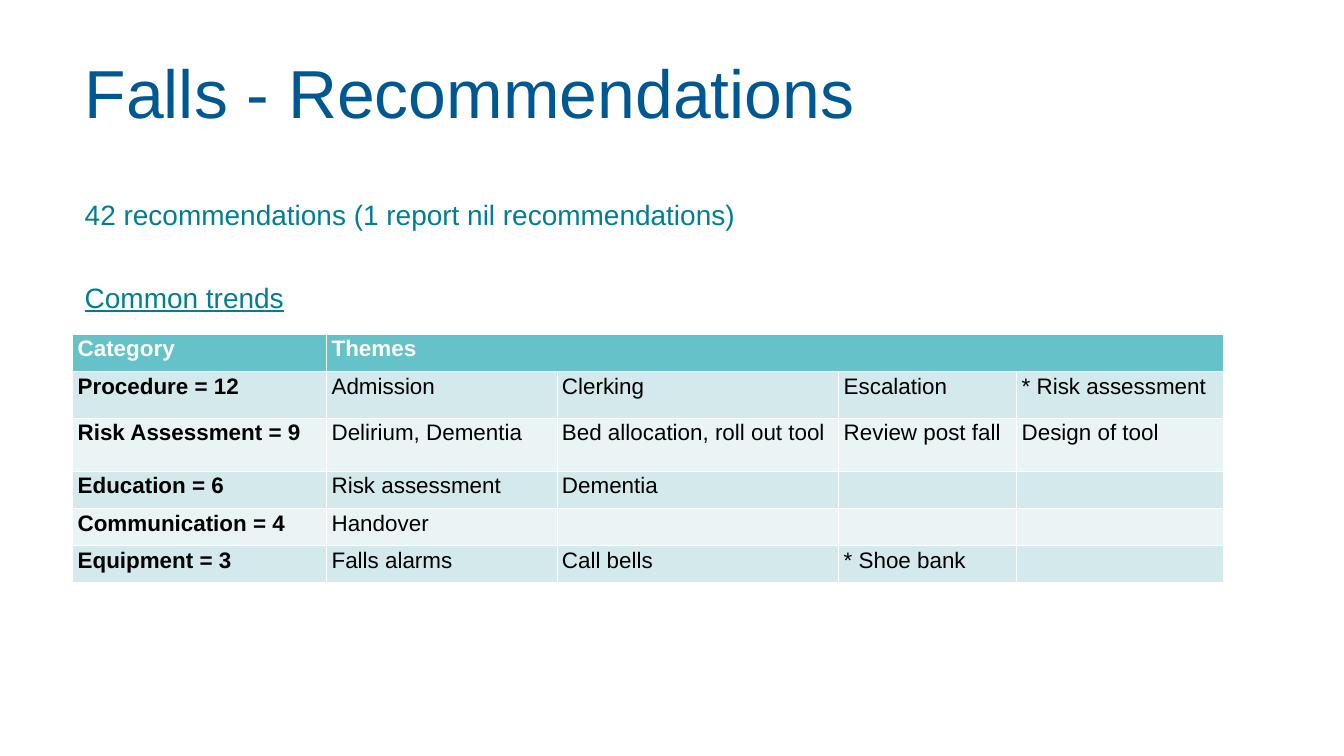
from lxml.etree import SubElement
from pptx import Presentation
from pptx.dml.color import RGBColor
from pptx.enum.text import MSO_ANCHOR, MSO_AUTO_SIZE, PP_ALIGN
from pptx.oxml.ns import qn
from pptx.util import Cm, Pt

TITLE = "Falls - Recommendations"
BODY = [  # text, underlined, space before in points
    ("42 recommendations (1 report nil recommendations)", False, 0),
    ("Common trends", True, 59.3),
]
HEADER = ["Category", "Themes"]
CATEGORIES = [
    ["Procedure = 12", "Admission", "Clerking", "Escalation", "* Risk assessment"],
    ["Risk Assessment = 9", "Delirium, Dementia", "Bed allocation, roll out tool",
     "Review post fall", "Design of tool"],
    ["Education = 6", "Risk assessment", "Dementia"],
    ["Communication = 4", "Handover"],
    ["Equipment = 3", "Falls alarms", "Call bells", "* Shoe bank"],
]
COLUMN_WIDTHS = [12.8, 11.61, 14.2, 8.97, 10.44]
ROW_HEIGHTS = [1.88, 2.34, 2.67, 1.88, 1.88, 1.88]
COLORS = {
    "title": "005892", "body": "007F92", "header": "64C2C8",
    "odd": "D3E9EB", "even": "EAF4F5", "white": "FFFFFF", "black": "000000",
}
FONT = "Arial"


def add_text(paragraph, text, size, color, bold=False, underline=False):
    span = paragraph.add_run()
    span.text = text
    span.font.name = FONT
    span.font.size = Pt(size)
    span.font.bold = bold
    span.font.underline = underline
    span.font.color.rgb = RGBColor.from_string(COLORS[color])


def place(box, left, top, width, height, anchor):
    box.left, box.top, box.width, box.height = map(Cm, (left, top, width, height))
    frame = box.text_frame
    frame.margin_left = frame.margin_right = frame.margin_top = frame.margin_bottom = 0
    frame.word_wrap = True
    frame.auto_size = MSO_AUTO_SIZE.NONE
    frame.vertical_anchor = anchor
    return frame


def set_borders(cell, bottom_width):
    properties = cell._tc.get_or_add_tcPr()
    for side in "LRTB":
        width = bottom_width if side == "B" else 1
        line = SubElement(properties, qn(f"a:ln{side}"), w=str(Pt(width)))
        fill = SubElement(line, qn("a:solidFill"))
        SubElement(fill, qn("a:srgbClr"), val=COLORS["white"])


def add_title(page):
    frame = place(page.shapes.title, 4.27, 3.12, 58.8, 3.23, MSO_ANCHOR.MIDDLE)
    paragraph = frame.paragraphs[0]
    paragraph.alignment = PP_ALIGN.LEFT
    paragraph.line_spacing = Pt(108)
    add_text(paragraph, TITLE, 97, "title")


def add_body(page):
    frame = place(page.placeholders[1], 4.27, 9.93, 59.99, 20.19, MSO_ANCHOR.TOP)
    for index, (text, underline, space_before) in enumerate(BODY):
        paragraph = frame.add_paragraph() if index else frame.paragraphs[0]
        properties = paragraph._p.get_or_add_pPr()
        properties.set("marL", "0")
        properties.set("indent", "0")
        SubElement(properties, qn("a:buNone"))
        paragraph.line_spacing = Pt(48)
        paragraph.space_before = Pt(space_before)
        paragraph.space_after = Pt(11.3)
        add_text(paragraph, text, 40, "body", underline=underline)


def add_trends_table(page):
    rows = [HEADER] + CATEGORIES
    table = page.shapes.add_table(
        len(rows), len(COLUMN_WIDTHS), Cm(3.66), Cm(16.84),
        Cm(sum(COLUMN_WIDTHS)), Cm(sum(ROW_HEIGHTS))).table
    for column, width in zip(table.columns, COLUMN_WIDTHS):
        column.width = Cm(width)
    for row, height in zip(table.rows, ROW_HEIGHTS):
        row.height = Cm(height)
    table.cell(0, 1).merge(table.cell(0, len(COLUMN_WIDTHS) - 1))

    for row_index, texts in enumerate(rows):
        is_header = row_index == 0
        band = "header" if is_header else ("even", "odd")[row_index % 2]
        for column_index in range(len(COLUMN_WIDTHS)):
            cell = table.cell(row_index, column_index)
            set_borders(cell, 3 if is_header else 1)
            cell.fill.solid()
            cell.fill.fore_color.rgb = RGBColor.from_string(COLORS[band])
            if column_index < len(texts):
                add_text(cell.text_frame.paragraphs[0], texts[column_index], 32,
                         "white" if is_header else "black",
                         bold=is_header or column_index == 0)


def main():
    deck = Presentation()
    deck.slide_width, deck.slide_height = Cm(67.74), Cm(38.1)
    page = deck.slides.add_slide(deck.slide_layouts[1])
    add_title(page)
    add_body(page)
    add_trends_table(page)
    deck.save("out.pptx")


if __name__ == "__main__":
    main()
